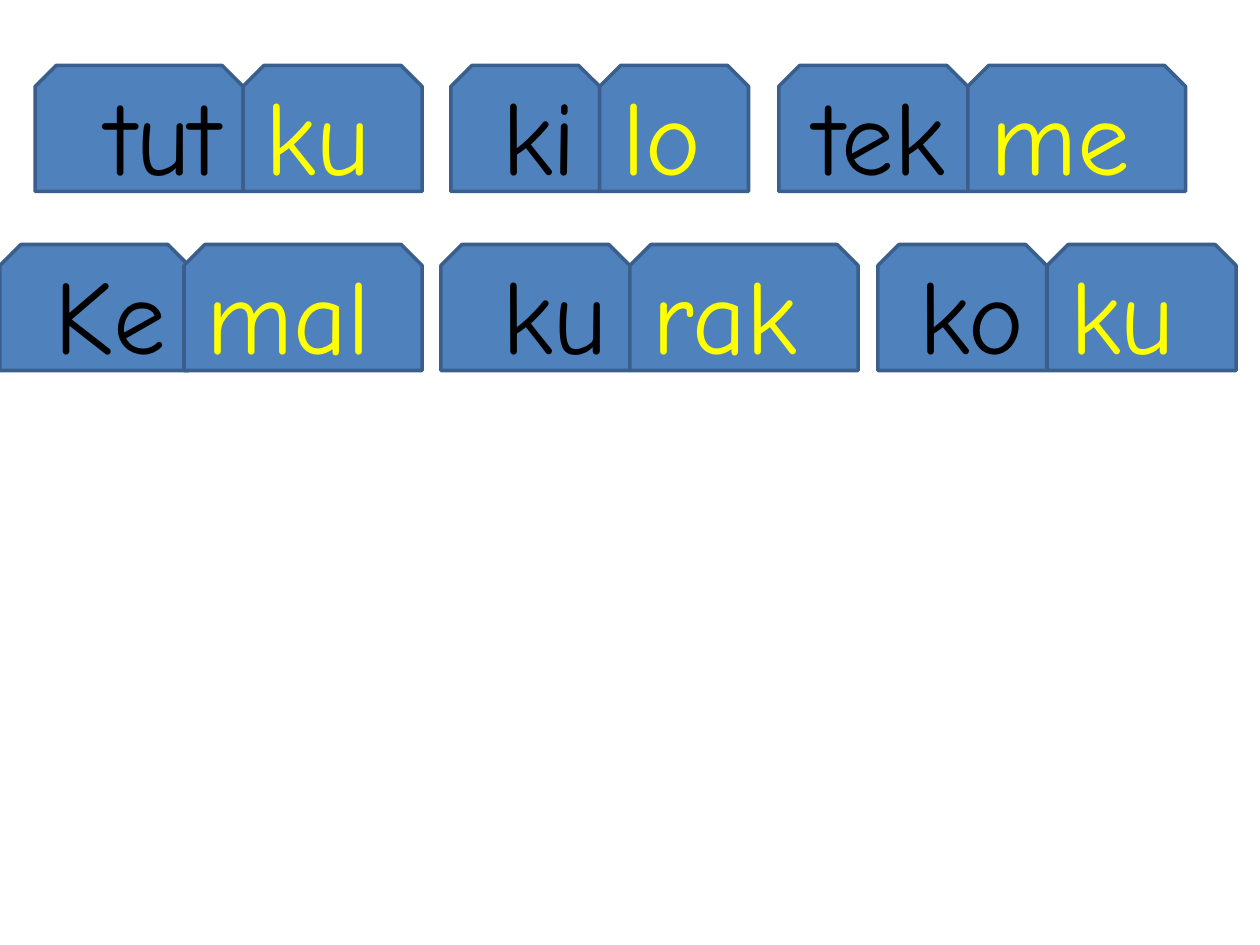
from pptx import Presentation
from pptx.dml.color import RGBColor
from pptx.enum import shapes, text
from pptx.util import Cm, Pt

BLUE = RGBColor(0x4F, 0x81, 0xBD)
EDGE = RGBColor(0x3A, 0x5F, 0x8C)
BLACK = RGBColor(0, 0, 0)
YELLOW = RGBColor(0xFF, 0xFF, 0)

HEIGHT = 2.54
# Each word: left, seam, width of first and second tile, syllables
ROWS = [
    (1.32, [
        (0.71, 4.9, 4.19, 3.61, "tut", "ku"),
        (9.09, 12.09, 3, 3, "ki", "lo"),
        (15.7, 19.51, 3.81, 4.39, "tek", "me"),
    ]),
    (4.93, [
        (0, 3.71, 3.81, 4.8, "Ke", "mal"),
        (8.89, 12.7, 3.81, 4.6, "ku", "rak"),
        (17.7, 21.11, 3.4, 3.81, "ko", "ku"),
    ]),
]

prs = Presentation()
prs.slide_width, prs.slide_height = Cm(25.4), Cm(19.05)
slide = prs.slides.add_slide(prs.slide_layouts[6])


def add_tile(label, left, top, width, color, align):
    tile = slide.shapes.add_shape(
        shapes.MSO_SHAPE.SNIP_2_SAME_RECTANGLE,
        Cm(left), Cm(top), Cm(width), Cm(HEIGHT))
    tile.shadow.inherit = False
    tile.fill.solid()
    tile.fill.fore_color.rgb = BLUE
    tile.line.color.rgb = EDGE
    tile.line.width = Pt(2)
    frame = tile.text_frame
    frame.vertical_anchor = text.MSO_ANCHOR.MIDDLE
    para = frame.paragraphs[0]
    para.alignment = align
    run = para.add_run()
    run.text = label
    run.font.name = "Comic Neue"
    run.font.size = Pt(60)
    run.font.color.rgb = color


for top, words in ROWS:
    for left, seam, wide1, wide2, first, second in words:
        add_tile(first, left, top, wide1, color=BLACK, align=text.PP_ALIGN.RIGHT)
        add_tile(second, seam, top, wide2, color=YELLOW, align=text.PP_ALIGN.LEFT)

prs.save("out.pptx")
